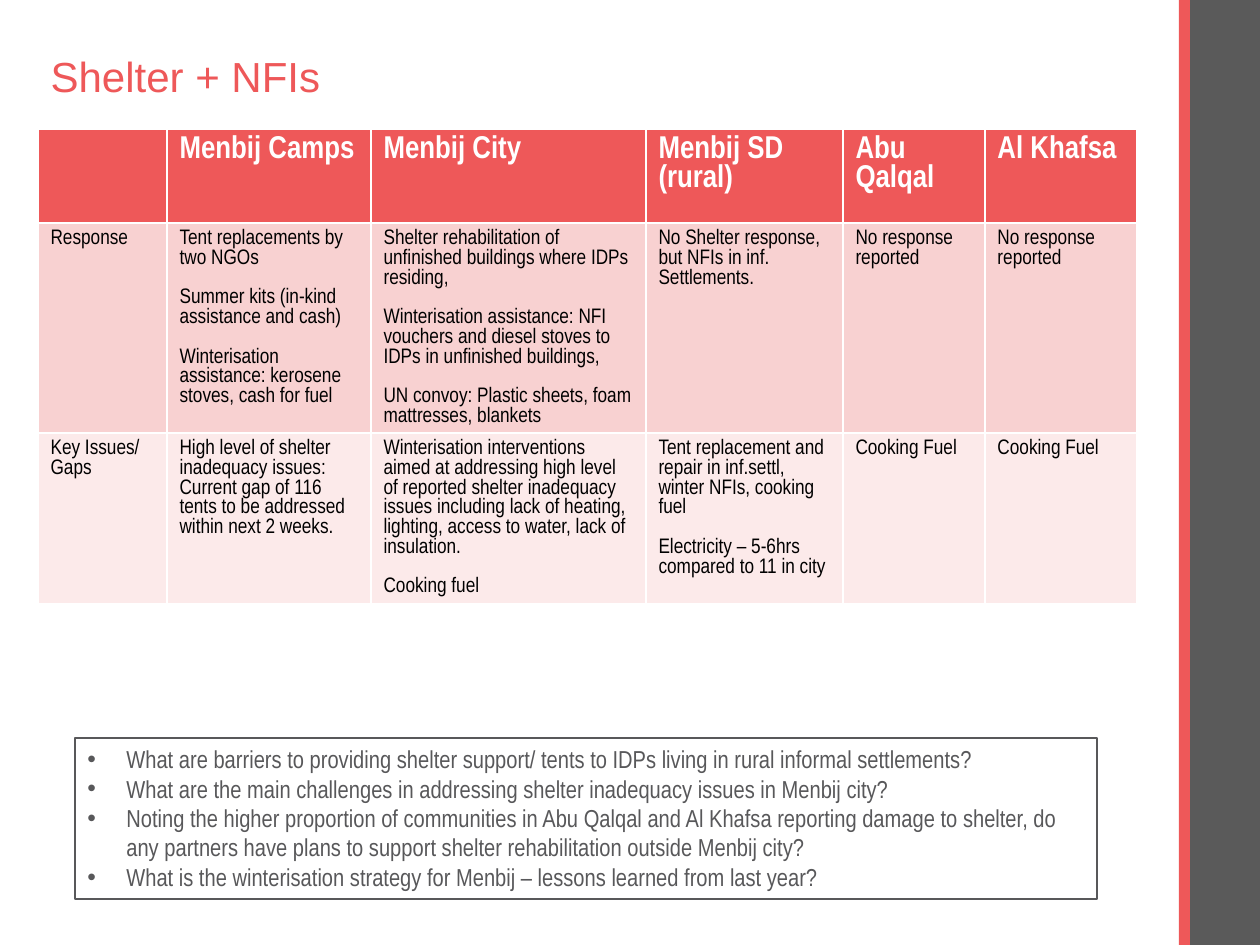
from dataclasses import dataclass

from lxml.etree import SubElement
from pptx import Presentation
from pptx.dml.color import RGBColor
from pptx.enum.shapes import MSO_SHAPE
from pptx.enum.text import MSO_ANCHOR, PP_ALIGN
from pptx.oxml.ns import qn
from pptx.slide import Slide
from pptx.table import _Cell
from pptx.text.text import _Paragraph
from pptx.util import Emu, Pt

PX_PER_INCH = 126


def px(length: int) -> Emu:
    return Emu(round(length * 914400 / PX_PER_INCH))


@dataclass(frozen=True)
class Theme:
    red: RGBColor = RGBColor(0xEE, 0x58, 0x59)
    dark: RGBColor = RGBColor(0x5A, 0x5A, 0x5A)
    slate: RGBColor = RGBColor(0x58, 0x58, 0x5A)
    rose: RGBColor = RGBColor(0xF8, 0xD1, 0xD1)
    blush: RGBColor = RGBColor(0xFC, 0xEA, 0xEA)
    white: RGBColor = RGBColor(0xFF, 0xFF, 0xFF)
    black: RGBColor = RGBColor(0, 0, 0)
    heading_font: str = "Arial"
    body_font: str = "Arial Narrow"
    title_size: int = 24
    header_size: int = 18
    question_size: int = 14
    cell_size: int = 12
    cell_gap: float = 11.3


THEME = Theme()


@dataclass(frozen=True)
class Box:
    left: int
    top: int
    width: int
    height: int

    def emu(self) -> tuple[Emu, ...]:
        return px(self.left), px(self.top), px(self.width), px(self.height)


@dataclass(frozen=True)
class Bar:
    box: Box
    color: RGBColor


@dataclass(frozen=True)
class Row:
    height: int
    fill: RGBColor
    color: RGBColor
    size: int
    bold: bool
    cells: tuple[str, ...]  # a line break starts a new paragraph


BARS = (
    Bar(Box(1190, 0, 70, 945), THEME.dark),
    Bar(Box(1179, 0, 11, 945), THEME.red),
)
TITLE_BOX = Box(38, 47, 1086, 63)
COLUMN_WIDTHS = (129, 204, 275, 197, 142, 152)
ROWS = (
    Row(94, THEME.red, THEME.white, THEME.header_size, True, (
        "", "Menbij Camps", "Menbij City", "Menbij SD (rural)", "Abu Qalqal", "Al Khafsa",
    )),
    Row(210, THEME.rose, THEME.black, THEME.cell_size, False, (
        "Response",
        "Tent replacements by two NGOs\n"
        "Summer kits (in-kind assistance and cash)\n"
        "Winterisation assistance: kerosene stoves, cash for fuel",
        "Shelter rehabilitation of unfinished buildings where IDPs residing,\n"
        "Winterisation assistance: NFI vouchers and diesel stoves to IDPs in unfinished buildings,\n"
        "UN convoy: Plastic sheets, foam mattresses, blankets",
        "No Shelter response, but NFIs in inf. Settlements.",
        "No response reported",
        "No response reported",
    )),
    Row(170, THEME.blush, THEME.black, THEME.cell_size, False, (
        "Key Issues/ Gaps",
        "High level of shelter inadequacy issues: Current gap of 116 tents to be addressed "
        "within next 2 weeks.",
        "Winterisation interventions aimed at addressing high level of reported shelter "
        "inadequacy issues including lack of heating, lighting, access to water, lack of "
        "insulation.\nCooking fuel",
        "Tent replacement and repair in inf.settl, winter NFIs, cooking fuel\n"
        "Electricity – 5-6hrs compared to 11 in city",
        "Cooking Fuel",
        "Cooking Fuel",
    )),
)
TABLE_BOX = Box(38, 129, sum(COLUMN_WIDTHS), sum(row.height for row in ROWS))
QUESTIONS_BOX = Box(75, 738, 1022, 161)
QUESTION_INDENT = 39
QUESTIONS = (
    "What are barriers to providing shelter support/ tents to IDPs living in rural informal "
    "settlements?",
    "What are the main challenges in addressing shelter inadequacy issues in Menbij city?",
    "Noting the higher proportion of communities in Abu Qalqal and Al Khafsa reporting damage "
    "to shelter, do any partners have plans to support shelter rehabilitation outside Menbij city?",
    "What is the winterisation strategy for Menbij – lessons learned from last year?",
)


def style(paragraph: _Paragraph, font: str, size: int, color: RGBColor, bold: bool = False) -> None:
    paragraph.alignment = PP_ALIGN.LEFT
    paragraph.font.name = font
    paragraph.font.size = Pt(size)
    paragraph.font.bold = bold
    paragraph.font.color.rgb = color


def add_bullet(paragraph: _Paragraph) -> None:
    properties = paragraph._p.get_or_add_pPr()
    properties.set("marL", str(px(QUESTION_INDENT)))
    properties.set("indent", str(-px(QUESTION_INDENT)))
    SubElement(properties, qn("a:buFont")).set("typeface", THEME.heading_font)
    SubElement(properties, qn("a:buChar")).set("char", "•")


def draw_bar(slide: Slide, bar: Bar) -> None:
    stripe = slide.shapes.add_shape(MSO_SHAPE.RECTANGLE, *bar.box.emu())
    stripe.shadow.inherit = False
    stripe.fill.solid()
    stripe.fill.fore_color.rgb = bar.color
    stripe.line.fill.background()


def draw_title(slide: Slide, wording: str) -> None:
    title = slide.shapes.title
    title.left, title.top, title.width, title.height = TITLE_BOX.emu()
    title.text_frame.text = wording
    title.text_frame.vertical_anchor = MSO_ANCHOR.MIDDLE
    heading = title.text_frame.paragraphs[0]
    heading.line_spacing = 0.9
    style(heading, THEME.heading_font, THEME.title_size, THEME.red)


def fill_cell(cell: _Cell, wording: str, row: Row) -> None:
    cell.fill.solid()
    cell.fill.fore_color.rgb = row.fill
    cell.text_frame.text = wording
    for index, paragraph in enumerate(cell.text_frame.paragraphs):
        if index:
            paragraph.space_before = Pt(THEME.cell_gap)
        style(paragraph, THEME.body_font, row.size, row.color, row.bold)


def draw_table(slide: Slide) -> None:
    frame = slide.shapes.add_table(len(ROWS), len(COLUMN_WIDTHS), *TABLE_BOX.emu())
    responses = frame.table
    for column, width in zip(responses.columns, COLUMN_WIDTHS):
        column.width = px(width)
    for table_row, row in zip(responses.rows, ROWS):
        table_row.height = px(row.height)
        for cell, wording in zip(table_row.cells, row.cells):
            fill_cell(cell, wording, row)


def draw_questions(slide: Slide) -> None:
    panel = slide.shapes.add_shape(MSO_SHAPE.RECTANGLE, *QUESTIONS_BOX.emu())
    panel.shadow.inherit = False
    panel.fill.background()
    panel.line.color.rgb = THEME.slate
    panel.line.width = Pt(0.75)
    panel.text_frame.word_wrap = True
    panel.text_frame.vertical_anchor = MSO_ANCHOR.TOP
    panel.text_frame.text = "\n".join(QUESTIONS)
    for question in panel.text_frame.paragraphs:
        add_bullet(question)
        style(question, THEME.body_font, THEME.question_size, THEME.slate)


def main() -> None:
    deck = Presentation()
    deck.slide_width, deck.slide_height = px(1260), px(945)
    slide = deck.slides.add_slide(deck.slide_layouts[5])

    # Side stripes
    for bar in BARS:
        draw_bar(slide, bar)

    # Title, response table and discussion questions
    draw_title(slide, "Shelter + NFIs")
    draw_table(slide)
    draw_questions(slide)

    deck.save("out.pptx")


if __name__ == "__main__":
    main()
